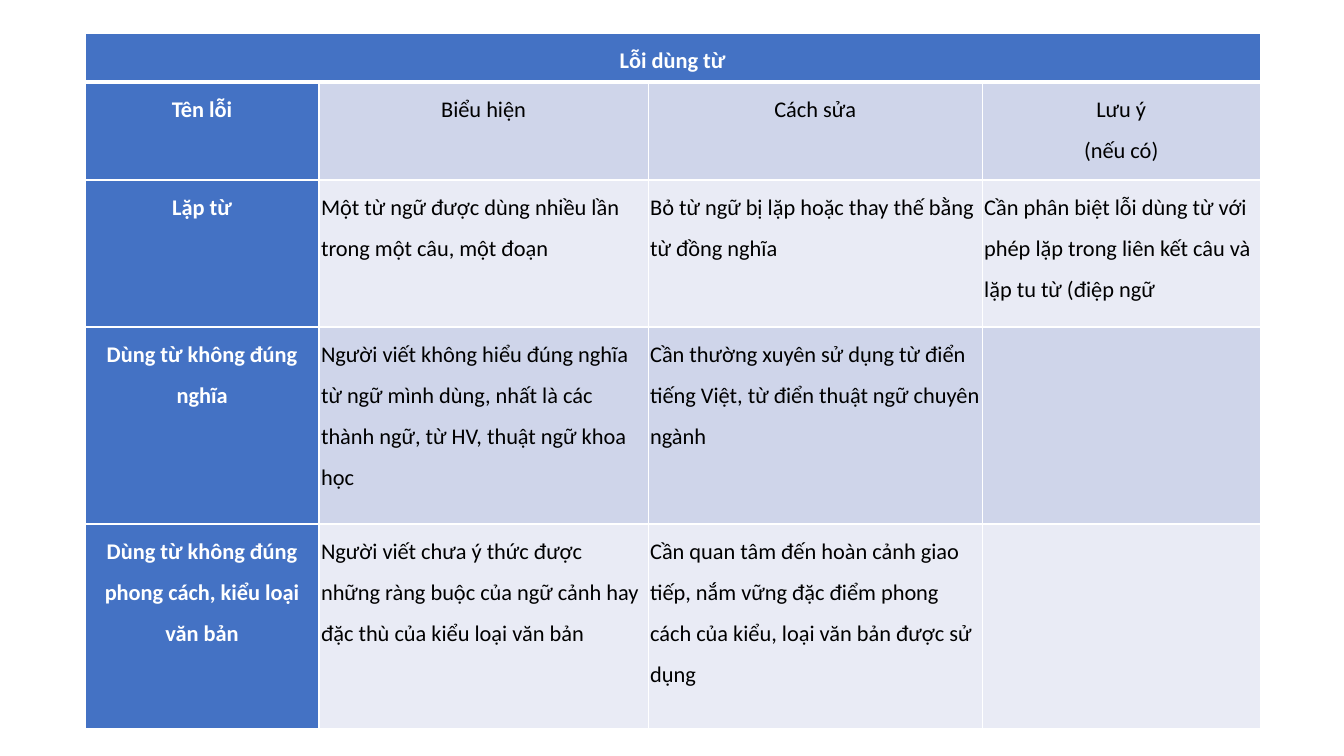
from lxml.etree import SubElement
from pptx import Presentation
from pptx.dml.color import RGBColor
from pptx.enum.text import PP_ALIGN as Align
from pptx.oxml.ns import qn
from pptx.util import Inches, Pt

PX = Inches(1) / 100.8
WHITE, BLACK, BLUE = "FFFFFF", "000000", "4472C4"
BANDS = ["CFD5EA", "E9EBF5"]

TABLE_BOX = (85, 33, 1175, 696)
COLUMN_WIDTHS = [234, 329, 334, 278]
ROW_HEIGHTS = [49, 98, 147, 197, 205]
ROWS = [
    ["Lỗi dùng từ", "", "", ""],
    ["Tên lỗi", "Biểu hiện", "Cách sửa", "Lưu ý\n(nếu có)"],
    ["Lặp từ",
     "Một từ ngữ được dùng nhiều lần trong một câu, một đoạn",
     "Bỏ từ ngữ bị lặp hoặc thay thế bằng từ đồng nghĩa",
     "Cần phân biệt lỗi dùng từ với phép lặp trong liên kết câu và lặp tu từ (điệp ngữ"],
    ["Dùng từ không đúng nghĩa",
     "Người viết không hiểu đúng nghĩa từ ngữ mình dùng, nhất là các thành ngữ, "
     "từ HV, thuật ngữ khoa học",
     "Cần thường xuyên sử dụng từ điển tiếng Việt, từ điển thuật ngữ chuyên ngành",
     ""],
    ["Dùng từ không đúng phong cách, kiểu loại văn bản",
     "Người viết chưa ý thức được những ràng buộc của ngữ cảnh hay đặc thù của "
     "kiểu loại văn bản",
     "Cần quan tâm đến hoàn cảnh giao tiếp, nắm vững đặc điểm phong cách của kiểu, "
     "loại văn bản được sử dụng",
     ""],
]


def px(length):
    return round(length * PX)


def color(hex_string):
    return RGBColor.from_string(hex_string)


def set_format(target, values):
    for name, value in values.items():
        setattr(target, name, value)


def add_borders(cell, row):
    """Draw white cell borders, thick between the title row and the rest."""
    widths = {"L": 1, "R": 1, "T": 3 if row == 1 else 1, "B": 3 if row == 0 else 1}
    properties = cell._tc.get_or_add_tcPr()
    for side, width in widths.items():
        line = SubElement(properties, qn(f"a:ln{side}"), w=str(Pt(width)))
        fill = SubElement(line, qn("a:solidFill"))
        SubElement(fill, qn("a:srgbClr"), val=WHITE)


def fill_cell(cell, text, row, column):
    is_heading = row == 0 or column == 0
    add_borders(cell, row)
    cell.fill.solid()
    cell.fill.fore_color.rgb = color(BLUE if is_heading else BANDS[(row - 1) % 2])
    set_format(cell, {"margin_left": px(2), "margin_right": px(2),
                      "margin_top": 0, "margin_bottom": 0})
    if not text:
        return
    cell.text = text
    centered = is_heading or row == 1
    for paragraph in cell.text_frame.paragraphs:
        set_format(paragraph, {"alignment": Align.CENTER if centered else Align.LEFT,
                               "line_spacing": 1.5})
        for run in paragraph.runs:
            set_format(run.font, {"name": "Calibri", "size": Pt(16), "bold": is_heading})
            run.font.color.rgb = color(WHITE if is_heading else BLACK)


def add_error_table(slide, box):
    frame = slide.shapes.add_table(len(ROWS), len(COLUMN_WIDTHS), *map(px, box))
    table = frame.table
    for column, width in zip(table.columns, COLUMN_WIDTHS):
        column.width = px(width)
    for row, height in zip(table.rows, ROW_HEIGHTS):
        row.height = px(height)
    for row, texts in enumerate(ROWS):
        for column, text in enumerate(texts):
            fill_cell(table.cell(row, column), text, row, column)
    table.cell(0, 0).merge(table.cell(0, len(COLUMN_WIDTHS) - 1))


def main():
    presentation = Presentation()
    set_format(presentation, {"slide_width": Inches(13.33), "slide_height": Inches(7.5)})
    slide = presentation.slides.add_slide(presentation.slide_layouts[6])
    add_error_table(slide, TABLE_BOX)
    presentation.save("out.pptx")


if __name__ == "__main__":
    main()
